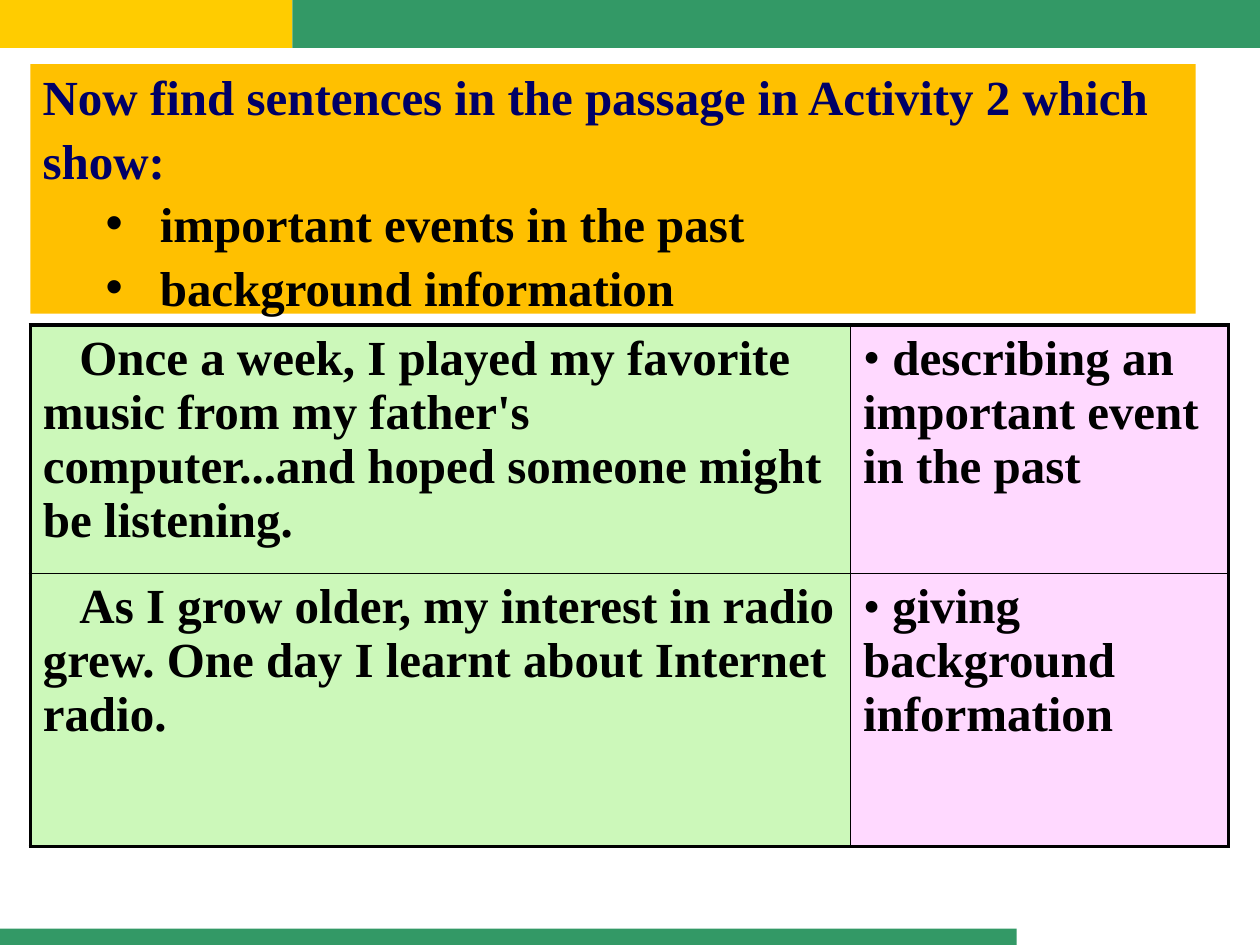
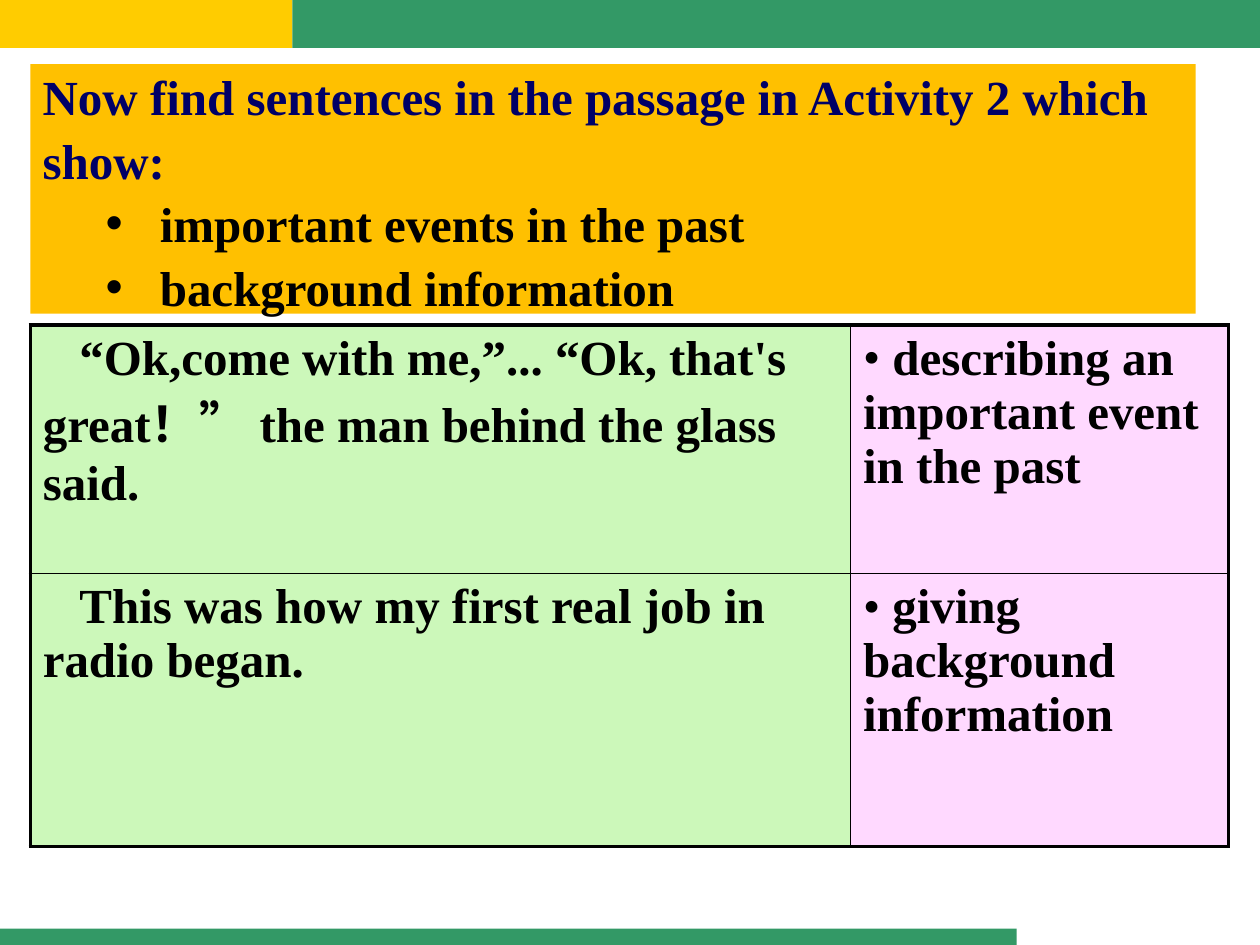
from pptx import Presentation
from pptx.dml.color import RGBColor
from pptx.enum.shapes import MSO_SHAPE
from pptx.enum.text import MSO_ANCHOR, PP_ALIGN
from pptx.oxml.ns import qn
from pptx.util import Inches, Pt
from lxml import etree

RECT = MSO_SHAPE.RECTANGLE
LEFT = PP_ALIGN.LEFT
MIDDLE = MSO_ANCHOR.MIDDLE

COLORS = {
    "gold": "FFCC00", "green": "339966", "amber": "FFC000", "navy": "000066",
    "black": "000000", "mint": "CCF8BA", "pink": "FFD9FF",
}
FONT = "Times New Roman"
SIZE = Pt(28)
THICK, THIN = Pt(2.25), Pt(1)

# Left, top, width, height in inches
BANDS = [
    ((0, 0, 2.32, 0.38), "gold"),
    ((2.32, 0, 7.68, 0.38), "green"),
    ((0, 7.37, 8.07, 0.13), "green"),
]
PROMPT_BOX = (0.24, 0.51, 9.25, 1.98)
TABLE_BOX = (0.24, 2.58, 9.51, 4.14)
COLS = (6.51, 3)
ROWS = (1.97, 2.17)

PROMPT = "Now find sentences in the passage in Activity 2 which show:"
POINTS = ["important events in the past", "background information"]
LABELS = [" describing an important event in the past",
          " giving background information"]
QUOTES = [
    ["Once a week, I played my favorite music from my father's "
     "computer...and hoped someone might be listening.",
     "As I grow older, my interest in radio grew. "
     "One day I learnt about Internet radio."],
    ["“Ok,come with me,”... “Ok, that's great！” "
     "the man behind the glass said.",
     "This was how my first real job in radio began."],
]


def rgb(name):
    return RGBColor.from_string(COLORS[name])


def add_rect(slide, box, color):
    shape = slide.shapes.add_shape(RECT, *map(Inches, box))
    shape.shadow.inherit = False
    shape.fill.solid()
    shape.fill.fore_color.rgb = rgb(color)
    shape.line.fill.background()
    return shape


def write(para, text, color="black", margin=0, indent=0, bullet=None):
    """Fill a paragraph; bullet is the font of its bullet, if any."""
    para.text = text
    para.alignment = LEFT
    font = para.font
    font.name, font.size, font.bold = FONT, SIZE, True
    font.color.rgb = rgb(color)
    props = para._p.get_or_add_pPr()
    props.set("marL", str(Inches(margin)))
    props.set("indent", str(Inches(indent)))
    if bullet:
        # Bullet tags come before the default run properties
        face = etree.Element(qn("a:buFont"), typeface=bullet)
        mark = etree.Element(qn("a:buChar"), char="•")
        props.find(qn("a:defRPr")).addprevious(face)
        face.addnext(mark)


def set_edge(cell, side, width):
    props = cell._tc.get_or_add_tcPr()
    line = etree.SubElement(props, qn("a:ln" + side), w=str(width))
    fill = etree.SubElement(line, qn("a:solidFill"))
    etree.SubElement(fill, qn("a:srgbClr"), val=COLORS["black"])


def add_bands(slide):
    for box, color in BANDS:
        add_rect(slide, box, color)


def add_prompt(slide, box):
    frame = add_rect(slide, box, "amber").text_frame
    frame.word_wrap = True
    frame.vertical_anchor = MIDDLE
    write(frame.paragraphs[0], PROMPT, "navy")
    for point in POINTS:
        write(frame.add_paragraph(), point, margin=0.93, indent=-0.43,
              bullet="Arial")
    for para in frame.paragraphs:
        para.line_spacing = 1.08


def add_grid(slide, box, quotes):
    grid = slide.shapes.add_table(len(ROWS), len(COLS),
                                  *map(Inches, box)).table
    grid.first_row = grid.horz_banding = False
    for col, width in zip(grid.columns, COLS):
        col.width = Inches(width)
    for row, height in zip(grid.rows, ROWS):
        row.height = Inches(height)

    for r, pair in enumerate(zip(quotes, LABELS)):
        for c, text in enumerate(pair):
            cell = grid.cell(r, c)
            # Outer edges are thick, inner edges thin
            outer = {"L": c == 0, "R": c == len(COLS) - 1,
                     "T": r == 0, "B": r == len(ROWS) - 1}
            for side, thick in outer.items():
                set_edge(cell, side, THICK if thick else THIN)
            cell.fill.solid()
            cell.fill.fore_color.rgb = rgb(("mint", "pink")[c])
            para = cell.text_frame.paragraphs[0]
            if c == 0:
                write(para, text, indent=0.29)
            else:
                write(para, text, bullet=FONT)


def main():
    deck = Presentation()
    deck.slide_width, deck.slide_height = Inches(10), Inches(7.5)
    for quotes in QUOTES:
        slide = deck.slides.add_slide(deck.slide_layouts[6])
        add_bands(slide)
        add_grid(slide, TABLE_BOX, quotes)
        add_prompt(slide, PROMPT_BOX)
    deck.save("out.pptx")


if __name__ == "__main__":
    main()
